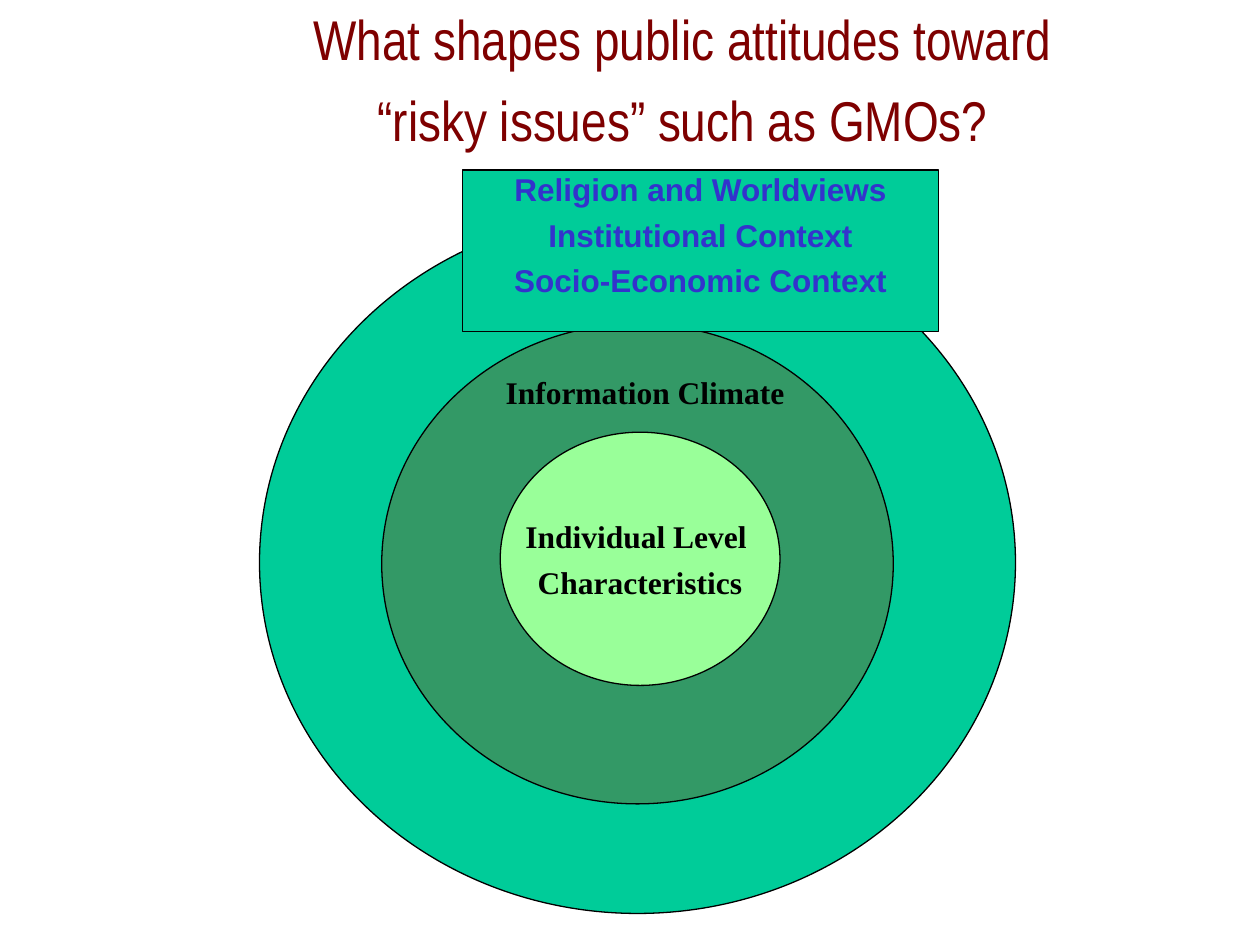
from pptx import Presentation
from pptx.dml.color import RGBColor
from pptx.enum.shapes import MSO_SHAPE as Shape
from pptx.enum.text import MSO_ANCHOR as Anchor, PP_ALIGN as Align
from pptx.util import Inches, Pt

COLORS = {
    "context": "00CC99",
    "climate": "339966",
    "individual": "99FF99",
    "black": "000000",
    "title": "7E0000",
    "context_text": "3333CC",
}


def color(name):
    return RGBColor.from_string(COLORS[name])


def write_lines(item, lines, font, size, ink, bold=True,
                anchor=Anchor.MIDDLE, wrap=False, gap=4.4):
    """Fill a shape or text box with centred lines, one paragraph each."""
    frame = item.text_frame
    frame.word_wrap = wrap
    frame.vertical_anchor = anchor
    for index, line in enumerate(lines):
        para = frame.add_paragraph() if index else frame.paragraphs[0]
        para.text = line
        para.alignment = Align.CENTER
        if index:
            para.space_before = Pt(gap)
        para.font.name = font
        para.font.size = Pt(size)
        para.font.bold = bold
        para.font.color.rgb = color(ink)


def add_figure(page, kind, left, top, width, height, fill):
    """Add a filled shape with a thin black outline."""
    figure = page.shapes.add_shape(
        kind, Inches(left), Inches(top), Inches(width), Inches(height))
    figure.shadow.inherit = False
    figure.fill.solid()
    figure.fill.fore_color.rgb = color(fill)
    figure.line.color.rgb = color("black")
    figure.line.width = Pt(0.75)
    return figure


def add_label(page, left, top, width, height, lines, **style):
    box = page.shapes.add_textbox(
        Inches(left), Inches(top), Inches(width), Inches(height))
    write_lines(box, lines, **style)


def main():
    deck = Presentation()
    deck.slide_width, deck.slide_height = Inches(10), Inches(7.5)
    page = deck.slides.add_slide(deck.slide_layouts[6])
    serif = {"font": "Times New Roman", "size": 18, "ink": "black"}

    # Nested levels of influence, outermost first
    add_figure(page, Shape.OVAL, 2.06, 1.68, 6, 5.57, "context")
    add_figure(page, Shape.OVAL, 3.03, 2.57, 4.06, 3.81, "climate")
    add_label(page, 3.9, 2.91, 2.44, 0.4, ["Information Climate"],
              anchor=Anchor.TOP, **serif)
    core = add_figure(page, Shape.OVAL, 3.97, 3.43, 2.22, 2.01, "individual")
    write_lines(core, ["Individual Level ", "Characteristics"], **serif)

    # Title
    add_label(page, 0.67, 0, 9.5, 1.25,
              ["What shapes public attitudes toward",
               "“risky issues” such as GMOs?"],
              font="Arial Narrow", size=32, ink="title", bold=False,
              wrap=True, gap=7.8)

    # Context panel over the outer ring
    panel = add_figure(page, Shape.RECTANGLE, 3.67, 1.35, 3.78, 1.28, "context")
    panel.text_frame.margin_top = 0
    write_lines(panel,
                ["Religion and Worldviews", "Institutional Context",
                 "Socio-Economic Context"],
                font="Arial", size=18, ink="context_text", anchor=Anchor.TOP)

    deck.save("out.pptx")


if __name__ == "__main__":
    main()
